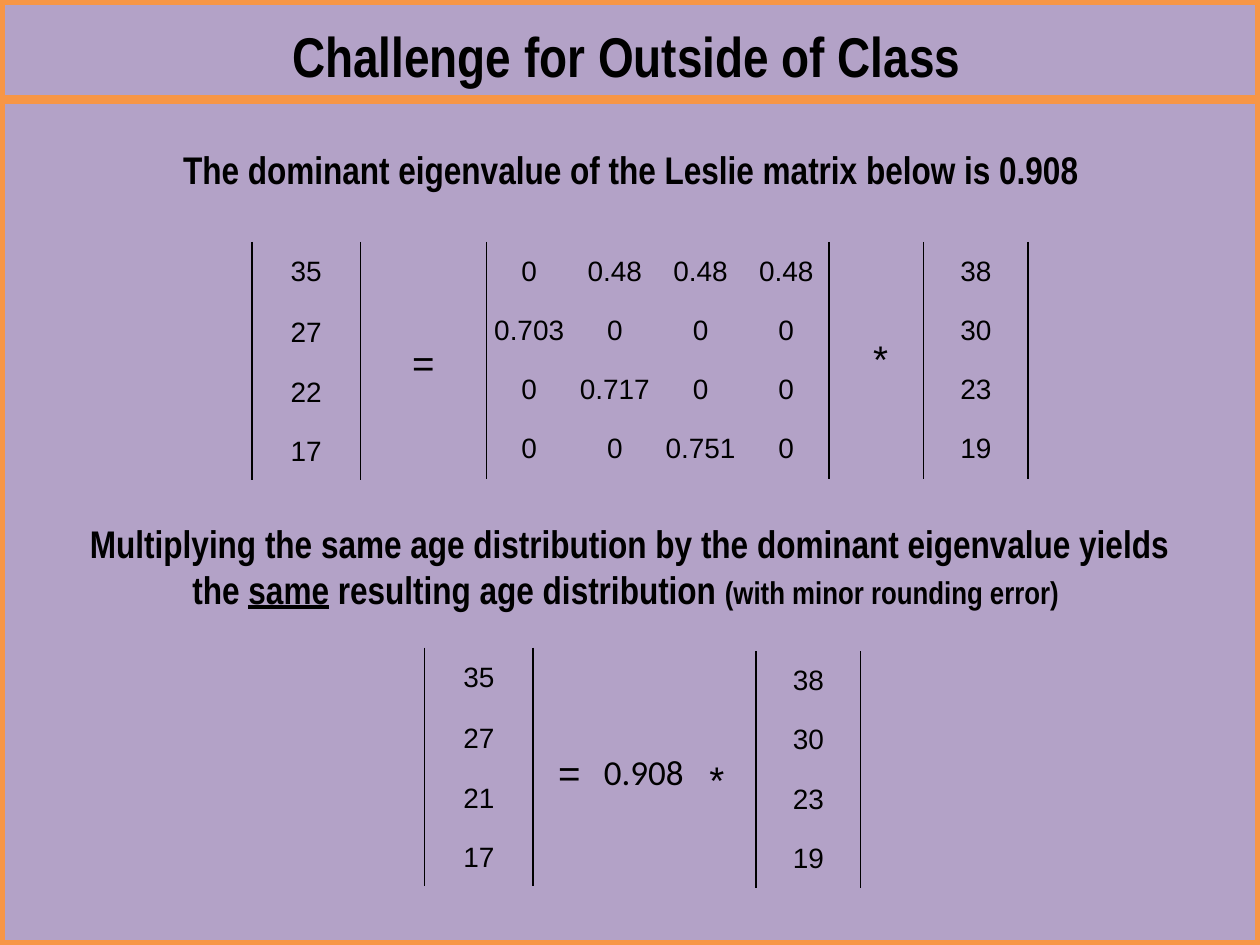
from lxml.etree import SubElement
from pptx import Presentation
from pptx.dml.color import RGBColor
from pptx.enum.shapes import MSO_CONNECTOR, MSO_SHAPE
from pptx.enum.text import MSO_ANCHOR, MSO_AUTO_SIZE, PP_ALIGN
from pptx.oxml.ns import qn
from pptx.util import Inches, Pt

COLORS = {"background": "B3A2C7", "accent": "F79646", "ink": "000000"}
HEADING_FONT, MATRIX_FONT, NUMBER_FONT = "Arial Narrow", "Arial", "Calibri"

NOW = [38, 30, 23, 19]
NEXT = [35, 27, 22, 17]
NEXT_BY_EIGENVALUE = [35, 27, 21, 17]
LESLIE = [
    [0, 0.48, 0.48, 0.48],
    [0.703, 0, 0, 0],
    [0, 0.717, 0, 0],
    [0, 0, 0.751, 0],
]
EVEN_ROWS = [0.47] * 4
NEXT_ROWS = [0.48] * 3 + [0.45]


def color(name):
    return RGBColor.from_string(COLORS[name])


class MatrixSlide:
    def __init__(self, prs):
        self.slide = prs.slides.add_slide(prs.slide_layouts[6])
        self.shapes = self.slide.shapes
        fill = self.slide.background.fill
        fill.solid()
        fill.fore_color.rgb = color("background")

    def font(self, font, name, size, bold=False):
        font.name, font.size, font.bold = name, Pt(size), bold
        font.color.rgb = color("ink")

    def frame(self, width, height, weight):
        sp = self.shapes.add_shape(MSO_SHAPE.RECTANGLE, 0, 0, width, height)
        sp.shadow.inherit = False
        sp.fill.background()
        sp.line.color.rgb = color("accent")
        sp.line.width = Pt(weight)

    def rule(self, left, right, y, weight):
        line = self.shapes.add_connector(
            MSO_CONNECTOR.STRAIGHT, Inches(left), Inches(y), Inches(right), Inches(y))
        line.line.color.rgb = color("accent")
        line.line.width = Pt(weight)
        SubElement(line._element.spPr, qn("a:effectLst"))

    def text(self, box, lines, size, name=HEADING_FONT, bold=True):
        """Each line is a list of (text, font overrides) runs."""
        tf = self.shapes.add_textbox(*map(Inches, box)).text_frame
        tf.word_wrap = True
        tf.auto_size = MSO_AUTO_SIZE.SHAPE_TO_FIT_TEXT
        for i, runs in enumerate(lines):
            p = tf.add_paragraph() if i else tf.paragraphs[0]
            p.alignment = PP_ALIGN.CENTER
            self.font(p.font, name, size, bold)
            for content, overrides in runs:
                r = p.add_run()
                r.text = content
                for key, value in overrides.items():
                    setattr(r.font, key, value)

    def borders(self, cell, visible):
        """Draw only the visible sides, hiding those of the table style."""
        tcPr = cell._tc.get_or_add_tcPr()
        for side in "LRTB":
            ln = SubElement(tcPr, qn(f"a:ln{side}"), w=str(Pt(1)))
            if side in visible:
                fill = SubElement(ln, qn("a:solidFill"))
                SubElement(fill, qn("a:srgbClr"), val=COLORS["ink"])
            else:
                SubElement(ln, qn("a:noFill"))

    def table(self, left, top, rows, col_width, row_heights):
        n = len(rows[0])
        table = self.shapes.add_table(
            len(rows), n, Inches(left), Inches(top),
            Inches(col_width * n), Inches(sum(row_heights))).table
        table.first_row = table.horz_banding = False
        for column in table.columns:
            column.width = Inches(col_width)
        for row, height, values in zip(table.rows, row_heights, rows):
            row.height = Inches(height)
            for cell, value in zip(row.cells, values):
                cell.text = str(value)
        return table

    def matrix(self, left, top, rows, col_width, row_heights=EVEN_ROWS, inset=0.1):
        table = self.table(left, top, rows, col_width, row_heights)
        last = len(rows[0]) - 1
        for row in table.rows:
            for j, cell in enumerate(row.cells):
                self.borders(cell, "L" * (j == 0) + "R" * (j == last))
                cell.fill.background()
                cell.vertical_anchor = MSO_ANCHOR.MIDDLE
                cell.margin_left = cell.margin_right = Inches(inset)
                p = cell.text_frame.paragraphs[0]
                p.alignment = PP_ALIGN.CENTER
                self.font(p.font, MATRIX_FONT, 16)

    def vector(self, left, top, values, col_width, row_heights=EVEN_ROWS):
        self.matrix(left, top, [[v] for v in values], col_width, row_heights)

    def operator(self, left, top, sign, width):
        cell = self.table(left, top, [[sign]], width, [0.5]).cell(0, 0)
        self.borders(cell, "")
        cell.fill.background()
        self.font(cell.text_frame.paragraphs[0].font, MATRIX_FONT, 22)


def main():
    prs = Presentation()
    prs.slide_width, prs.slide_height = Inches(10), Inches(7.5)
    s = MatrixSlide(prs)
    s.frame(prs.slide_width, prs.slide_height, 6)
    s.rule(0.01, 10, 0.79, 5)
    s.text((0.74, 0.12, 8.47, 0.64), [[("Challenge for Outside of Class", {})]], 32)
    s.text((0.33, 1.11, 9.35, 0.47),
           [[("The dominant eigenvalue of the Leslie matrix below is 0.908", {})]], 22)

    s.operator(3.17, 2.67, "=", 0.25)
    s.vector(2, 1.92, NEXT, 0.86, NEXT_ROWS)
    s.matrix(3.86, 1.92, LESLIE, 0.68, inset=0.05)
    s.operator(6.83, 2.64, "*", 0.33)
    s.vector(7.33, 1.92, NOW, 0.83)

    s.text((0.32, 4.08, 9.35, 0.84), [
        [("Multiplying the same age distribution by the dominant eigenvalue yields", {})],
        [("the ", {}), ("same", {"underline": True}),
         (" resulting age distribution ", {}),
         ("(with minor rounding error) ", {"size": Pt(18)})],
    ], 22)

    s.operator(4.33, 5.92, "=", 0.25)
    s.operator(5.53, 5.98, "*", 0.33)
    s.text((4.63, 5.91, 0.96, 0.44), [[("0.908", {})]], 20, NUMBER_FONT, bold=False)
    s.vector(6, 5.17, NOW, 0.83)
    s.vector(3.37, 5.14, NEXT_BY_EIGENVALUE, 0.86, NEXT_ROWS)
    prs.save("out.pptx")


if __name__ == "__main__":
    main()
